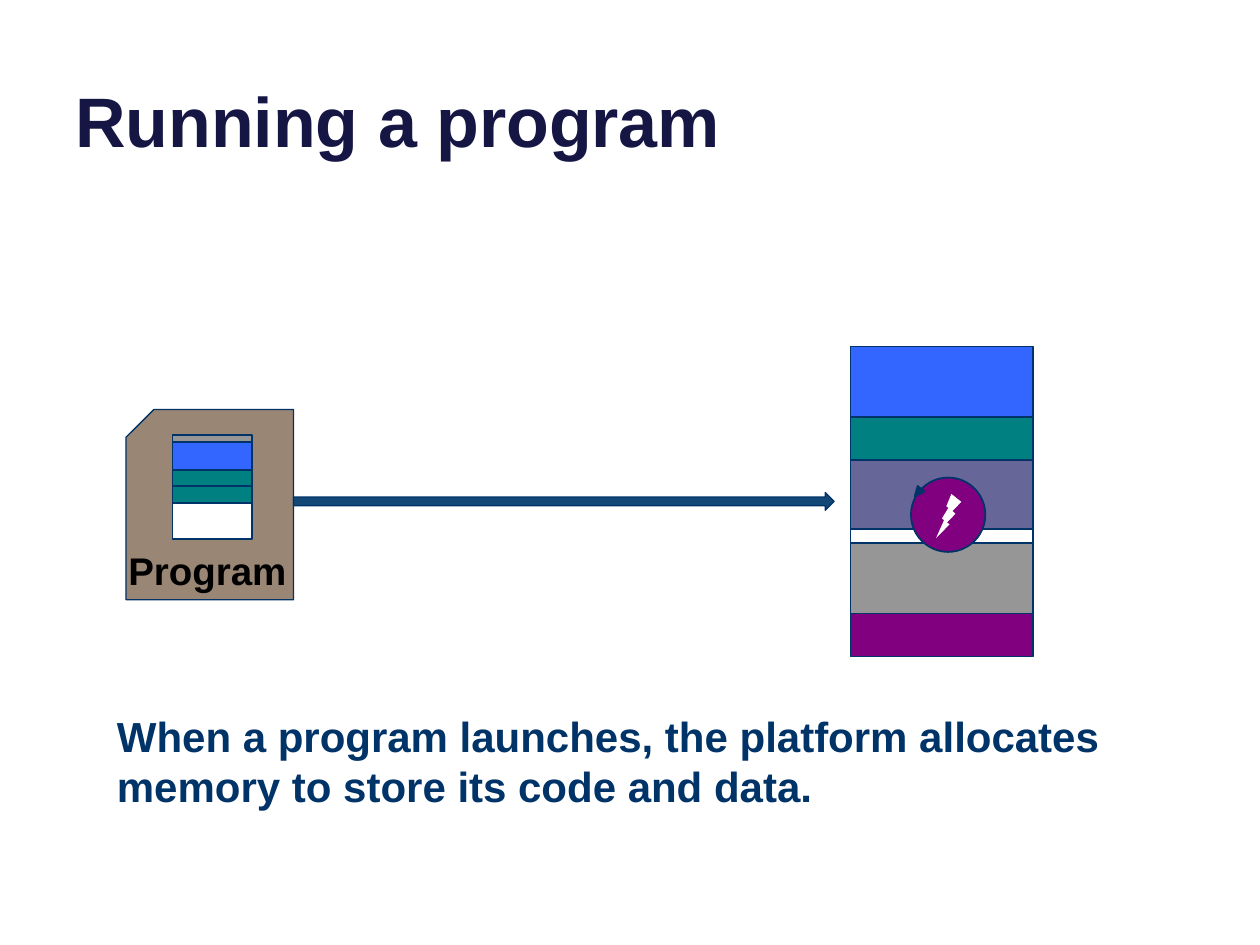
from pptx import Presentation
from pptx.dml.color import RGBColor
from pptx.enum import shapes, text
from pptx.util import Inches, Pt

NAVY = RGBColor(0x00, 0x33, 0x67)
TITLE_INK = RGBColor(0x16, 0x16, 0x45)
BLACK = RGBColor(0x00, 0x00, 0x00)
WHITE = RGBColor(0xFF, 0xFF, 0xFF)
BROWN = RGBColor(0x99, 0x86, 0x74)
ARROW_BLUE = RGBColor(0x13, 0x47, 0x76)
BLUE = RGBColor(0x33, 0x66, 0xFF)
TEAL = RGBColor(0x00, 0x80, 0x80)
SLATE = RGBColor(0x66, 0x66, 0x99)
GRAY = RGBColor(0x96, 0x96, 0x96)
PURPLE = RGBColor(0x80, 0x00, 0x80)

KIND = shapes.MSO_SHAPE

# Bands from top to bottom: height in inches, colour
MEMORY_BANDS = [(0.56, BLUE), (0.34, TEAL), (0.55, SLATE),
                (0.11, WHITE), (0.56, GRAY), (0.34, PURPLE)]
FILE_BANDS = [(0.06, GRAY), (0.22, BLUE), (0.13, TEAL), (0.13, TEAL), (0.29, WHITE)]


def add_figure(parent, kind, box, fill, line_width=1, flip=False, rotation=0):
    """Add a preset shape; a line width of 0 means no outline."""
    figure = parent.shapes.add_shape(kind, *map(Inches, box))
    figure.shadow.inherit = False
    figure.fill.solid()
    figure.fill.fore_color.rgb = fill
    if line_width:
        figure.line.color.rgb = NAVY
        figure.line.width = Pt(line_width)
    else:
        figure.line.fill.background()
    if flip:
        figure._element.spPr.xfrm.set("flipH", "1")
    figure.rotation = rotation
    return figure


def add_label(slide, words, box, size, color, anchor=text.MSO_ANCHOR.TOP):
    label = slide.shapes.add_textbox(*map(Inches, box))
    frame = label.text_frame
    frame.word_wrap = True
    frame.vertical_anchor = anchor
    frame.text = words
    font = frame.paragraphs[0].runs[0].font
    font.name = "Arial"
    font.size = Pt(size)
    font.bold = True
    font.color.rgb = color


def add_stack(slide, left, top, width, bands):
    """Stack coloured bands downwards in a group."""
    stack = slide.shapes.add_group_shape()
    for height, color in bands:
        add_figure(stack, KIND.FLOWCHART_PROCESS, (left, top, width, height), color)
        top += height
    return stack


def add_running_mark(parent):
    """Circling arrow with a lightning bolt: code being executed."""
    add_figure(parent, KIND.OVAL, (7.23, 3.79, 0.59, 0.59), PURPLE)
    add_figure(parent, KIND.LIGHTNING_BOLT, (7.43, 3.92, 0.2, 0.35), WHITE,
               line_width=0, flip=True)
    add_figure(parent, KIND.ISOSCELES_TRIANGLE, (7.25, 3.87, 0.07, 0.08), NAVY,
               rotation=219)


def main():
    deck = Presentation()
    deck.slide_width, deck.slide_height = Inches(10), Inches(7.5)
    slide = deck.slides.add_slide(deck.slide_layouts[6])

    # Program file
    add_figure(slide, KIND.SNIP_1_RECTANGLE, (1, 3.25, 1.33, 1.51), BROWN,
               line_width=0.75, flip=True)
    add_label(slide, "Program", (0.92, 4.29, 2.01, 0.47), 22, BLACK)

    # Launch arrow
    add_figure(slide, KIND.RIGHT_ARROW, (2.33, 3.91, 4.29, 0.14), ARROW_BLUE,
               line_width=0.75)

    # Title and explanation
    add_label(slide, "Running a program", (0.5, -0.37, 9, 1.7), 40, TITLE_INK,
              text.MSO_ANCHOR.BOTTOM)
    add_label(slide, "When a program launches, the platform allocates "
              "memory to store its code and data.", (0.83, 5.59, 8, 0.91), 24, NAVY)

    # Memory of the running program, and the file's contents
    memory = add_stack(slide, 6.75, 2.75, 1.45, MEMORY_BANDS)
    add_running_mark(memory)
    add_stack(slide, 1.37, 3.45, 0.63, FILE_BANDS)

    deck.save("out.pptx")


if __name__ == "__main__":
    main()
